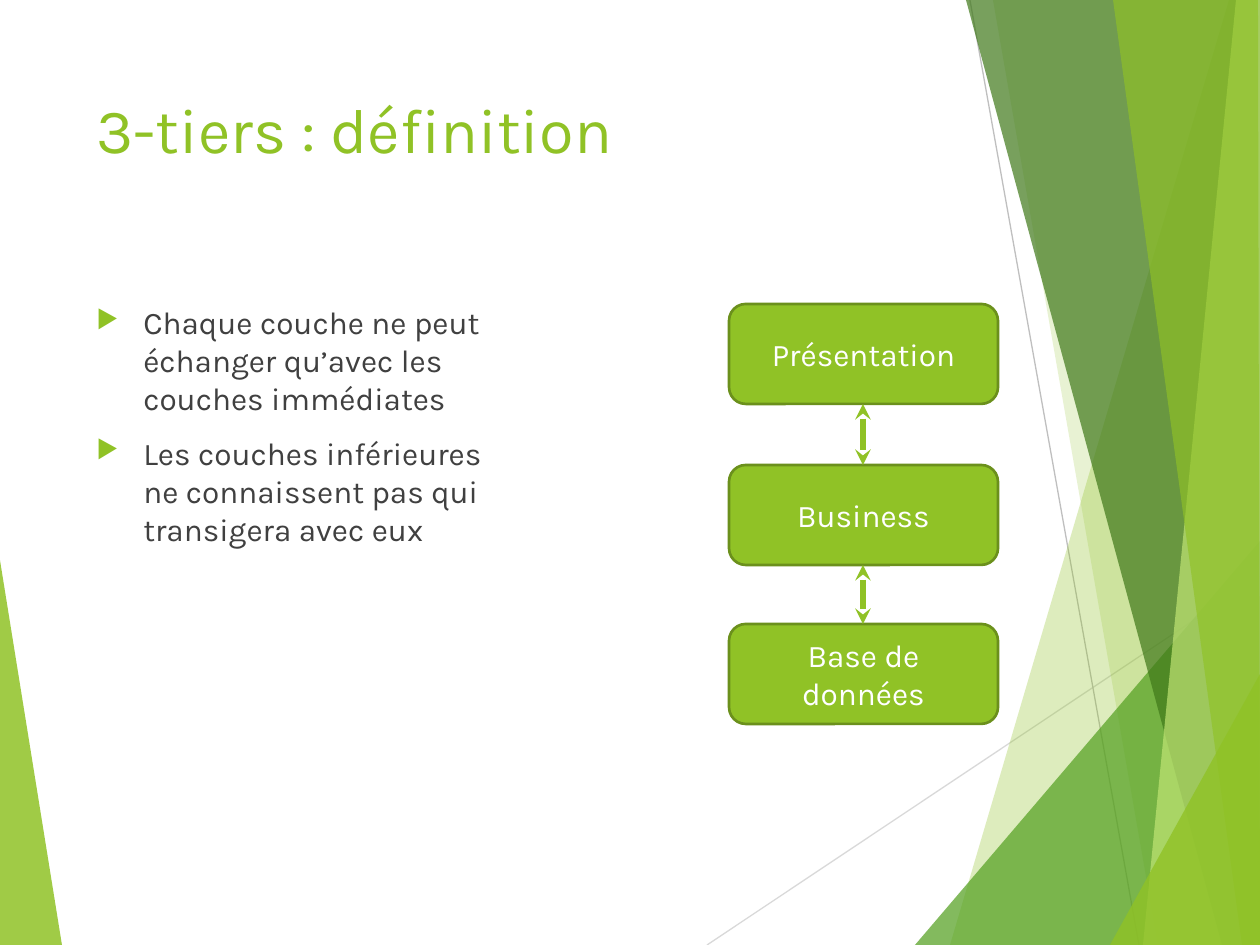
"""Build the slide that defines the 3-tier architecture."""
from dataclasses import dataclass

from lxml import etree
from pptx import Presentation
from pptx import util as u
from pptx.dml.color import RGBColor
from pptx.enum import shapes, text
from pptx.oxml.ns import qn

PX = u.Inches(1) / 126
FONT = "Karla"
COLORS = {
    "lime": "90C226", "green": "54A021", "forest": "3F7819", "pale": "C0E474",
    "edge": "6B901C", "text": "404040", "white": "FFFFFF",
    "light_gray": "D9D9D9", "gray": "BFBFBF",
}


@dataclass
class Facet:
    points: list[tuple[int, int]]
    color: str
    alpha: int


@dataclass
class Line:
    start: tuple[int, int]
    end: tuple[int, int]
    color: str
    width: float
    arrows: bool = False


@dataclass
class Tier:
    label: str
    top: int


LEFT_FACET = Facet([(0, 560), (62, 945), (0, 945)], "lime", 85)
RAYS = [
    Line((707, 945), (1260, 576), "light_gray", 0.75),
    Line((970, 0), (1139, 945), "gray", 0.75),
]
RIGHT_FACETS = [
    Facet([(1229, 0), (950, 945), (1260, 945), (1260, 0)], "lime", 30),
    Facet([(993, 0), (1158, 945), (1260, 945), (1260, 0)], "lime", 20),
    Facet([(915, 945), (1260, 541), (1260, 945)], "green", 72),
    Facet([(966, 0), (1222, 945), (1260, 945), (1260, 0)], "forest", 70),
    Facet([(1236, 0), (1143, 945), (1260, 945), (1260, 0)], "pale", 70),
    Facet([(1113, 0), (1242, 945), (1260, 945), (1258, 0)], "lime", 65),
    Facet([(1110, 945), (1260, 674), (1260, 945)], "lime", 80),
]
BULLETS = [
    "Chaque couche ne peut échanger qu’avec les couches immédiates",
    "Les couches inférieures ne connaissent pas qui transigera avec eux",
]
TIERS = [Tier("Présentation", 304), Tier("Business", 465), Tier("Base de données", 624)]
TIER_LEFT, TIER_WIDTH, TIER_HEIGHT = 729, 269, 100


def px(*values: int) -> list[int]:
    """Turn pixels into EMU."""
    return [round(v * PX) for v in values]


def rgb(name: str) -> RGBColor:
    """Look up a named colour."""
    return RGBColor.from_string(COLORS[name])


def add_run(p, content: str, size: int, color: str) -> None:
    """Add one formatted run to a paragraph."""
    r = p.add_run()
    r.text = content
    r.font.name, r.font.size = FONT, u.Pt(size)
    r.font.color.rgb = rgb(color)


def add_facet(s, facet: Facet) -> None:
    """Draw a translucent polygon."""
    builder = s.shapes.build_freeform(*facet.points[0], scale=PX)
    builder.add_line_segments(facet.points[1:], close=True)
    sp = builder.convert_to_shape()
    sp.shadow.inherit = False
    sp.line.fill.background()
    sp.fill.solid()
    sp.fill.fore_color.rgb = rgb(facet.color)
    clr = sp._element.spPr.find(qn("a:solidFill")).find(qn("a:srgbClr"))
    etree.SubElement(clr, qn("a:alpha"), val=str(facet.alpha * 1000))


def add_line(s, line: Line) -> None:
    """Draw a straight line, with an arrowhead at both ends if asked."""
    c = s.shapes.add_connector(
        shapes.MSO_CONNECTOR.STRAIGHT, *px(*line.start, *line.end))
    c.line.color.rgb = rgb(line.color)
    c.line.width = u.Pt(line.width)
    if line.arrows:
        for end in ("a:headEnd", "a:tailEnd"):
            etree.SubElement(c.line._get_or_add_ln(), qn(end), type="stealth")
    etree.SubElement(c._element.spPr, qn("a:effectLst"))


def add_title(s, content: str) -> None:
    """Place and fill the title placeholder."""
    sp = s.shapes.title
    sp.left, sp.top, sp.width, sp.height = px(84, 84, 874, 181)
    tf = sp.text_frame
    tf.vertical_anchor = text.MSO_ANCHOR.TOP
    p = tf.paragraphs[0]
    p.alignment = text.PP_ALIGN.LEFT
    add_run(p, content, 36, "lime")


def add_bullets(s, items: list[str]) -> None:
    """Write the bulleted list."""
    tf = s.shapes.add_textbox(*px(84, 297, 426, 534)).text_frame
    tf.word_wrap = True
    for i, item in enumerate(items):
        p = tf.paragraphs[0] if i == 0 else tf.add_paragraph()
        p.space_before = u.Pt(10)
        pPr = p._p.get_or_add_pPr()
        indent = px(47)[0]
        pPr.set("marL", str(indent))
        pPr.set("indent", str(-indent))
        clr = etree.SubElement(pPr, qn("a:buClr"))
        etree.SubElement(clr, qn("a:srgbClr"), val=COLORS["lime"])
        etree.SubElement(pPr, qn("a:buSzPct"), val="80000")
        etree.SubElement(pPr, qn("a:buChar"), char="▶")
        add_run(p, item, 18, "text")


def add_tier(s, tier: Tier) -> None:
    """Draw one labelled tier box."""
    sp = s.shapes.add_shape(
        shapes.MSO_SHAPE.ROUNDED_RECTANGLE,
        *px(TIER_LEFT, tier.top, TIER_WIDTH, TIER_HEIGHT))
    sp.shadow.inherit = False
    sp.fill.solid()
    sp.fill.fore_color.rgb = rgb("lime")
    sp.line.color.rgb = rgb("edge")
    sp.line.width = u.Pt(1.5)
    tf = sp.text_frame
    tf.word_wrap = True
    tf.vertical_anchor = text.MSO_ANCHOR.MIDDLE
    p = tf.paragraphs[0]
    p.alignment = text.PP_ALIGN.CENTER
    add_run(p, tier.label, 18, "white")


def main() -> None:
    """Assemble and save the slide."""
    prs = Presentation()
    prs.slide_width, prs.slide_height = px(1260, 945)
    s = prs.slides.add_slide(prs.slide_layouts[5])
    add_facet(s, LEFT_FACET)
    for ray in RAYS:
        add_line(s, ray)
    for facet in RIGHT_FACETS:
        add_facet(s, facet)
    add_title(s, "3-tiers : définition")
    add_bullets(s, BULLETS)
    for tier in TIERS:
        add_tier(s, tier)
    middle = TIER_LEFT + TIER_WIDTH // 2
    for upper, lower in zip(TIERS, TIERS[1:]):
        add_line(s, Line((middle, upper.top + TIER_HEIGHT), (middle, lower.top),
                         "lime", 3, arrows=True))
    prs.save("out.pptx")


if __name__ == "__main__":
    main()
